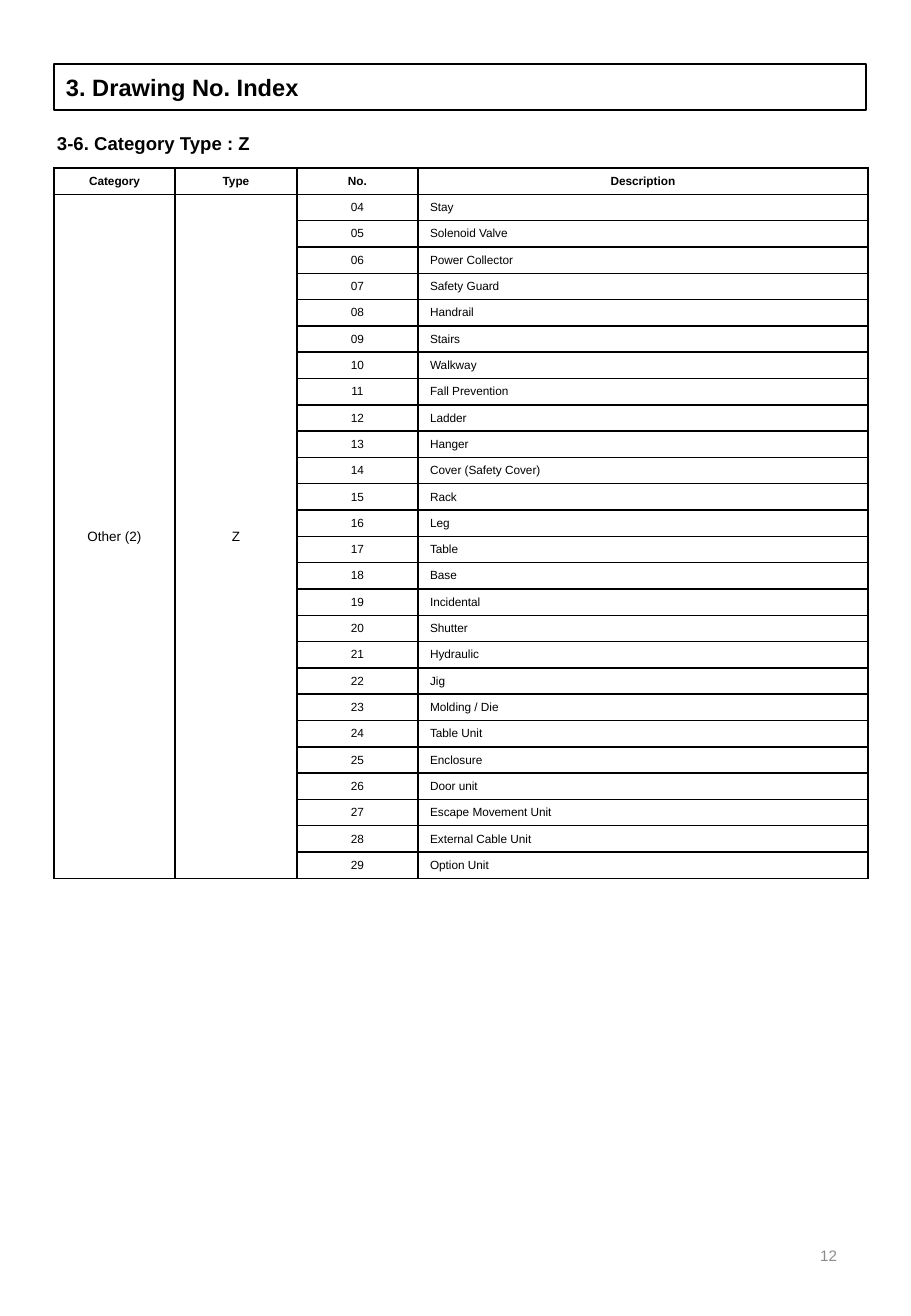
import pptx
import pptx.dml.color
import pptx.enum.shapes
import pptx.enum.text
import pptx.oxml
import pptx.oxml.ns
import pptx.util

TITLE = "3. Drawing No. Index"
SUBTITLE = "3-6. Category Type : Z"
PAGE_NUMBER = "12"
HEADINGS = ["Category", "Type", "No.", "Description"]
CATEGORY, CATEGORY_TYPE = "Other (2)", "Z"
FIRST_NO = 4
DESCRIPTIONS = [
    "Stay", "Solenoid Valve", "Power Collector", "Safety Guard", "Handrail",
    "Stairs", "Walkway", "Fall Prevention", "Ladder", "Hanger",
    "Cover (Safety Cover)", "Rack", "Leg", "Table", "Base", "Incidental",
    "Shutter", "Hydraulic", "Jig", "Molding / Die", "Table Unit", "Enclosure",
    "Door unit", "Escape Movement Unit", "External Cable Unit", "Option Unit",
]

THEME = {
    "font": "Arial", "ink": "000000", "muted": "8C8C8C", "line": 1,
    "title": 14, "subtitle": 11, "page": 9, "group": 8, "cell": 7,
}

# Lengths in px
PX_PER_INCH = 121.5
SLIDE_SIZE = (911, 1316)
TITLE_BOX = (54, 64, 812, 46)
SUBTITLE_BOX = (45, 126, 558, 35)
PAGE_BOX = (644, 1220, 205, 70)
TABLE_BOX = (54, 168, 814, 711)
COLUMN_WIDTHS = [121, 122, 121, 450]

ALIGN = pptx.enum.text.PP_ALIGN
ANCHOR = pptx.enum.text.MSO_ANCHOR


def emu(px):
    return pptx.util.Emu(round(px * 914400 / PX_PER_INCH))


def rgb(name):
    return pptx.dml.color.RGBColor.from_string(THEME[name])


def write(frame, text, size, bold=False, color="ink", align=ALIGN.LEFT):
    frame.text = text
    paragraph = frame.paragraphs[0]
    paragraph.alignment = align
    for run in paragraph.runs:
        run.font.name = THEME["font"]
        run.font.size = pptx.util.Pt(THEME[size])
        run.font.bold = bold
        run.font.color.rgb = rgb(color)


def add_label(slide, box, text, size, anchor=ANCHOR.TOP, **style):
    label = slide.shapes.add_textbox(*map(emu, box))
    label.text_frame.word_wrap = True
    label.text_frame.vertical_anchor = anchor
    write(label.text_frame, text, size, **style)


def outline(cell):
    """Draw the four cell borders and leave the cell unfilled."""
    properties = cell._tc.get_or_add_tcPr()
    width = pptx.util.Pt(THEME["line"])
    for side in ("lnL", "lnR", "lnT", "lnB"):
        properties.append(pptx.oxml.parse_xml(
            f'<a:{side} {pptx.oxml.ns.nsdecls("a")} w="{width}"><a:solidFill>'
            f'<a:srgbClr val="{THEME["ink"]}"/></a:solidFill></a:{side}>'))
    cell.fill.background()


def add_title(slide):
    title = slide.shapes.add_shape(
        pptx.enum.shapes.MSO_SHAPE.RECTANGLE, *map(emu, TITLE_BOX))
    title.shadow.inherit = False
    title.fill.background()
    title.line.color.rgb = rgb("ink")
    title.line.width = pptx.util.Pt(THEME["line"])
    title.text_frame.vertical_anchor = ANCHOR.MIDDLE
    write(title.text_frame, TITLE, "title", bold=True)


def add_index(slide):
    row_count = len(DESCRIPTIONS) + 1
    index = slide.shapes.add_table(
        row_count, len(HEADINGS), *map(emu, TABLE_BOX)).table
    index.first_row = index.horz_banding = False
    for column, width in zip(index.columns, COLUMN_WIDTHS):
        column.width = emu(width)
    for row in index.rows:
        row.height = emu(TABLE_BOX[3] / row_count)
    for cell in index.iter_cells():
        outline(cell)
        cell.vertical_anchor = ANCHOR.MIDDLE
        cell.margin_top = cell.margin_bottom = 0

    for column, heading in enumerate(HEADINGS):
        write(index.cell(0, column).text_frame, heading, "cell", bold=True,
              align=ALIGN.CENTER)
    for column, group in enumerate((CATEGORY, CATEGORY_TYPE)):
        top = index.cell(1, column)
        top.merge(index.cell(row_count - 1, column))
        write(top.text_frame, group, "group", align=ALIGN.CENTER)
    for row, description in enumerate(DESCRIPTIONS, start=1):
        number = f"{FIRST_NO + row - 1:02d}"
        write(index.cell(row, 2).text_frame, number, "cell",
              align=ALIGN.CENTER)
        write(index.cell(row, 3).text_frame, description, "cell")


def main():
    deck = pptx.Presentation()
    deck.slide_width, deck.slide_height = map(emu, SLIDE_SIZE)
    slide = deck.slides.add_slide(deck.slide_layouts[6])
    add_title(slide)
    add_label(slide, SUBTITLE_BOX, SUBTITLE, "subtitle", bold=True)
    add_index(slide)
    add_label(slide, PAGE_BOX, PAGE_NUMBER, "page", anchor=ANCHOR.MIDDLE,
              color="muted", align=ALIGN.RIGHT)
    deck.save("out.pptx")


if __name__ == "__main__":
    main()
